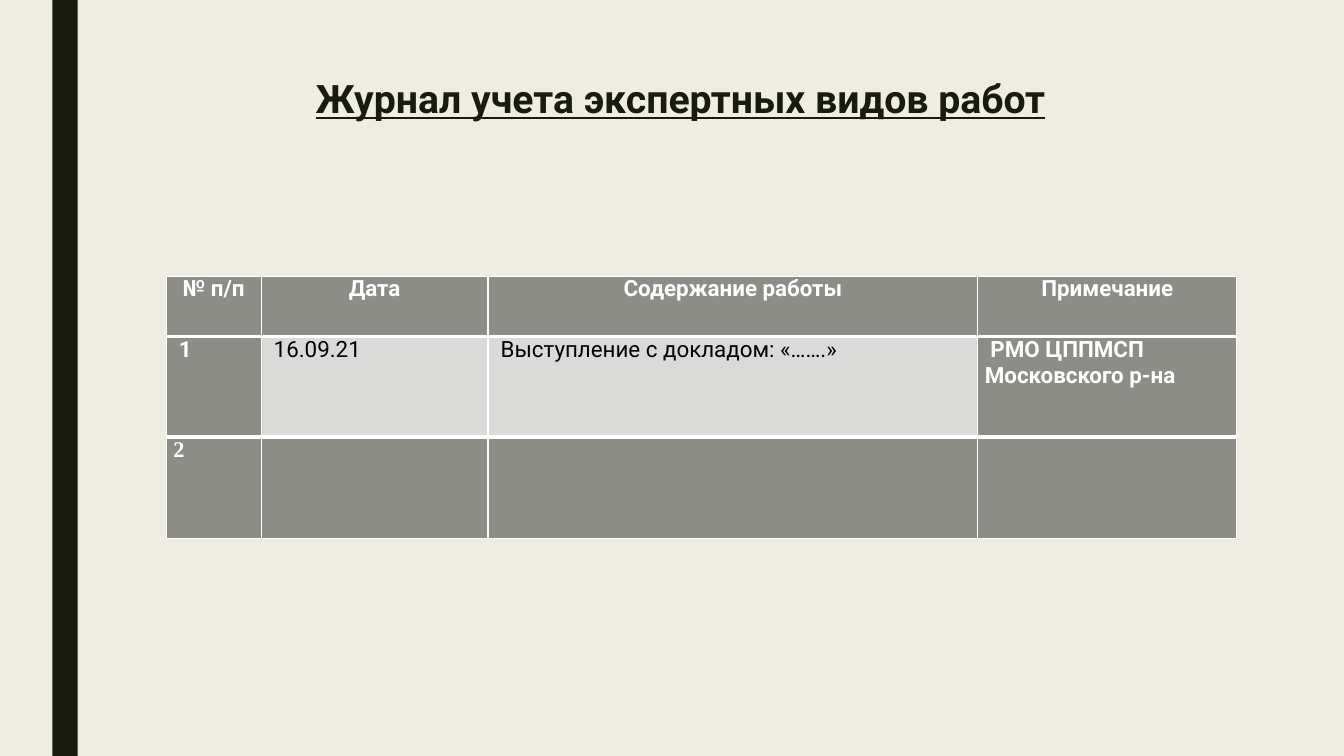
from dataclasses import dataclass

from lxml.etree import SubElement
from pptx import Presentation
from pptx.dml.color import RGBColor as Rgb
from pptx.enum.shapes import MSO_SHAPE as Shape
from pptx.enum.text import MSO_ANCHOR as Anchor, PP_ALIGN as Align
from pptx.oxml.ns import qn
from pptx.util import Cm, Pt

TITLE = "Журнал учета экспертных видов работ"
HEADINGS = ["№ п/п", "Дата", "Содержание работы", "Примечание"]
ENTRIES = [
    [" 1", " 16.09.21", " Выступление с докладом: «…….»", " РМО ЦППМСП Московского р-на"],
    ["2", "", "", ""],
]
PLAIN_CELLS = {(1, 1), (1, 2)}  # (row, column) of light cells with regular text
SERIF_CELLS = {(2, 0)}

SLIDE_SIZE = (33.87, 19.05)
STRIPE = (1.32, 0, 0.64, 19.05)
TITLE_BOX = (3.81, 1.9, 26.67, 4.11)
JOURNAL_CORNER = (4.19, 6.96)
COLUMN_WIDTHS = [2.39, 5.72, 12.34, 6.53]
ROW_HEIGHTS = [1.52, 2.54, 2.54]
CELL_INSET = 0.18


@dataclass(frozen=True)
class Theme:
    background: str = "EFEDE3"
    dark: str = "191B0E"
    white: str = "FFFFFF"
    black: str = "000000"
    strong_cell: str = "8C8D86"
    light_cell: str = "DADBD9"
    font: str = "Roboto"
    serif: str = "Times New Roman"
    title_size: int = 28
    cell_size: int = 16
    thin_line: int = 1
    thick_line: int = 3


THEME = Theme()


def paint(fill, color):
    fill.solid()
    fill.fore_color.rgb = Rgb.from_string(color)


def write(frame, text, size, color, font=THEME.font, bold=True, underline=None, align=Align.LEFT):
    paragraph = frame.paragraphs[0]
    paragraph.alignment = align
    run = paragraph.add_run()
    run.text = text
    run.font.name, run.font.size = font, Pt(size)
    run.font.bold, run.font.underline = bold, underline
    run.font.color.rgb = Rgb.from_string(color)
    return paragraph


def add_borders(cell, widths):
    """Draw white cell borders; widths are points for left, right, top, bottom."""
    properties = cell._tc.get_or_add_tcPr()
    for position, (side, width) in enumerate(zip("LRTB", widths)):
        line = properties.makeelement(qn(f"a:ln{side}"), {"w": str(Pt(width))})
        properties.insert(position, line)
        solid = SubElement(line, qn("a:solidFill"))
        SubElement(solid, qn("a:srgbClr"), val=THEME.white)


def add_stripe(slide):
    stripe = slide.shapes.add_shape(Shape.RECTANGLE, *map(Cm, STRIPE))
    stripe.shadow.inherit = False
    paint(stripe.fill, THEME.dark)
    stripe.line.fill.background()


def add_title(slide):
    frame = slide.shapes.add_textbox(*map(Cm, TITLE_BOX)).text_frame
    frame.word_wrap = True
    frame.vertical_anchor = Anchor.TOP
    heading = write(frame, TITLE, THEME.title_size, THEME.dark, underline=True, align=Align.CENTER)
    heading.line_spacing = 0.89


def fill_cell(cell, row, column, text):
    plain = (row, column) in PLAIN_CELLS
    paint(cell.fill, THEME.light_cell if plain else THEME.strong_cell)
    cell.margin_left = cell.margin_right = Cm(CELL_INSET)
    cell.margin_top = cell.margin_bottom = 0
    top = THEME.thick_line if row else THEME.thin_line
    bottom = THEME.thick_line if row < len(ENTRIES) else THEME.thin_line
    add_borders(cell, (THEME.thin_line, THEME.thin_line, top, bottom))
    if text:
        write(
            cell.text_frame, text, THEME.cell_size,
            color=THEME.black if plain else THEME.white,
            font=THEME.serif if (row, column) in SERIF_CELLS else THEME.font,
            bold=not plain,
            align=Align.LEFT if row else Align.CENTER,
        )


def add_journal(slide):
    rows = [HEADINGS, *ENTRIES]
    extent = (sum(COLUMN_WIDTHS), sum(ROW_HEIGHTS))
    journal = slide.shapes.add_table(
        len(rows), len(HEADINGS), *map(Cm, JOURNAL_CORNER + extent)
    ).table
    for column, width in zip(journal.columns, COLUMN_WIDTHS):
        column.width = Cm(width)
    for row, height in zip(journal.rows, ROW_HEIGHTS):
        row.height = Cm(height)
    for r, texts in enumerate(rows):
        for c, text in enumerate(texts):
            fill_cell(journal.cell(r, c), r, c, text)


def main():
    deck = Presentation()
    deck.slide_width, deck.slide_height = map(Cm, SLIDE_SIZE)
    slide = deck.slides.add_slide(deck.slide_layouts[6])
    paint(slide.background.fill, THEME.background)
    add_stripe(slide)
    add_title(slide)
    add_journal(slide)
    deck.save("out.pptx")


if __name__ == "__main__":
    main()
